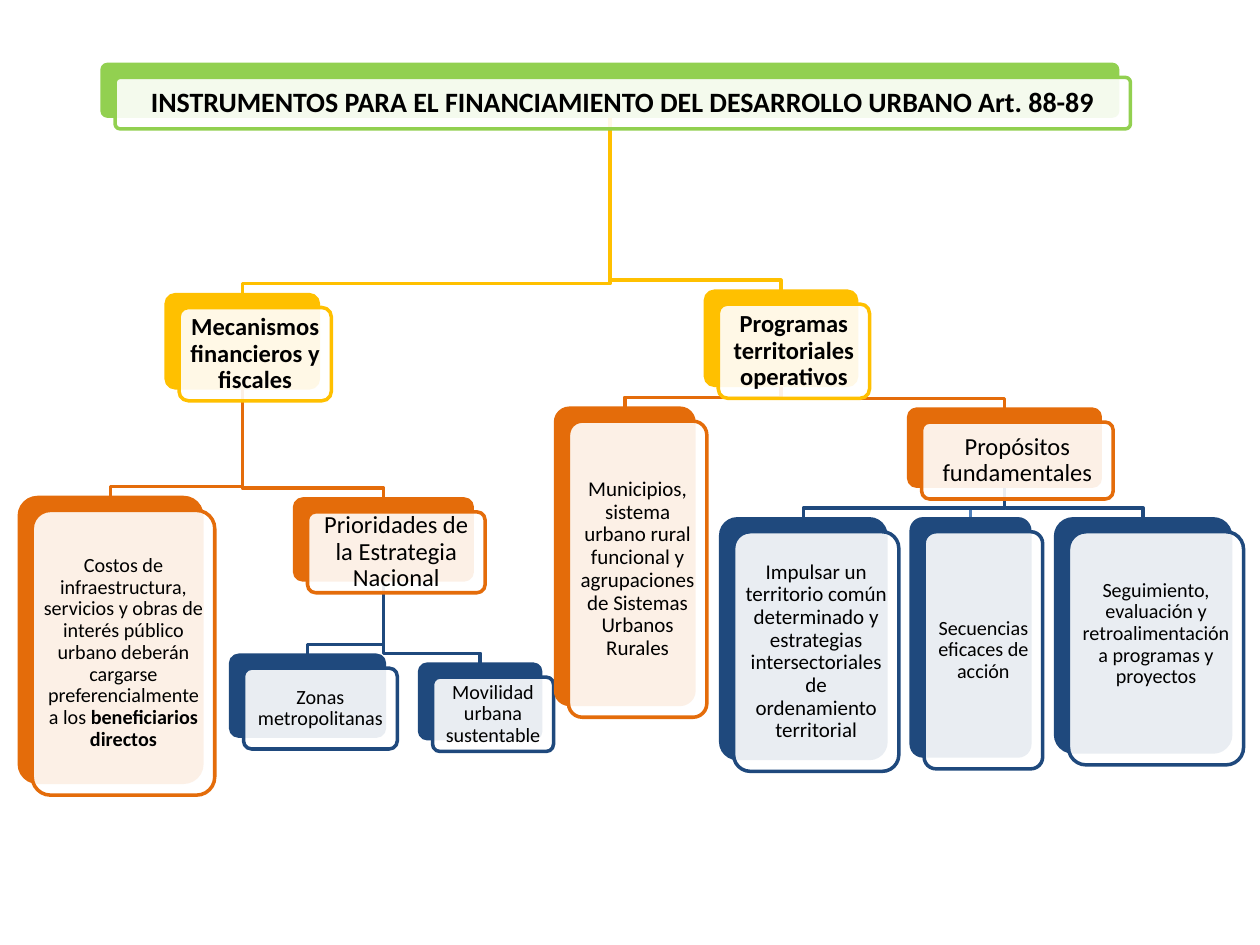
"""Draws the hierarchy of funding instruments for urban development."""
from dataclasses import dataclass
from typing import Optional

from lxml import etree
from pptx import Presentation
from pptx.dml.color import RGBColor
from pptx.enum.shapes import MSO_SHAPE
from pptx.enum.text import MSO_ANCHOR, PP_ALIGN
from pptx.oxml.ns import qn
from pptx.util import Cm, Pt

ROUNDED = MSO_SHAPE.ROUNDED_RECTANGLE
MIDDLE = MSO_ANCHOR.MIDDLE
CENTER = PP_ALIGN.CENTER

GREEN = RGBColor(0x92, 0xD0, 0x50)
YELLOW = RGBColor(0xFF, 0xC0, 0x00)
ORANGE = RGBColor(0xE4, 0x6C, 0x0A)
NAVY = RGBColor(0x1F, 0x49, 0x7D)
BLUE = RGBColor(0x4F, 0x81, 0xBD)
WHITE = RGBColor(0xFF, 0xFF, 0xFF)
BLACK = RGBColor(0x00, 0x00, 0x00)

FONT = "Calibri"
LINE_WIDTH = Pt(2)
CARD_OFFSET = 0.26
ELBOW_RISE = 0.22
INSET_PER_POINT = 0.0106


@dataclass
class Node:
    """One box of the hierarchy, with its place in centimetres."""
    text: str
    left: float
    top: float
    width: float
    height: float
    color: RGBColor
    size: float
    parent: Optional["Node"] = None
    bold: bool = False
    bold_tail: str = ""
    link_color: Optional[RGBColor] = None
    bottom_space: float = 0

    @property
    def center(self) -> float:
        return self.left + self.width / 2

    @property
    def bottom(self) -> float:
        return self.top + self.height


TITLE = Node("INSTRUMENTOS PARA EL FINANCIAMIENTO DEL DESARROLLO URBANO Art. 88-89",
             2.06, 1.3, 20.47, 1.04, GREEN, 16, bold=True)
MECHANISMS = Node("Mecanismos financieros y fiscales",
                  3.35, 5.94, 3.07, 1.88, YELLOW, 14, TITLE, bold=True)
COSTS = Node("Costos de infraestructura, servicios y obras de interés público urbano "
             "deberán cargarse preferencialmente a los ",
             0.39, 10.03, 3.68, 5.74, ORANGE, 11.5, MECHANISMS,
             bold_tail="beneficiarios directos")
PRIORITIES = Node("Prioridades de la Estrategia Nacional",
                  5.94, 10.06, 3.58, 1.63, ORANGE, 14, MECHANISMS)
ZONES = Node("Zonas metropolitanas", 4.65, 13.21, 3.1, 1.63, NAVY, 11.5, PRIORITIES)
MOBILITY = Node("Movilidad urbana sustentable",
                8.46, 13.39, 2.44, 1.5, NAVY, 11.5, PRIORITIES)
PROGRAMS = Node("Programas territoriales operativos",
                14.22, 5.87, 3.05, 1.9, YELLOW, 14, TITLE, bold=True)
TOWNS = Node("Municipios, sistema urbano rural funcional y agrupaciones de Sistemas "
             "Urbanos Rurales", 11.2, 8.23, 2.79, 5.97, ORANGE, 12, PROGRAMS)
PURPOSES = Node("Propósitos fundamentales",
                18.32, 8.25, 3.86, 1.55, ORANGE, 14, PROGRAMS)
TERRITORY = Node("Impulsar un territorio común determinado y estrategias "
                 "intersectoriales de ordenamiento territorial",
                 14.53, 10.46, 3.33, 4.83, NAVY, 12, PURPOSES)
SEQUENCES = Node("Secuencias eficaces de acción",
                 18.37, 10.46, 2.39, 4.78, NAVY, 11.5, PURPOSES, link_color=BLUE)
FOLLOW_UP = Node("Seguimiento, evaluación y retroalimentación a programas y proyectos",
                 21.28, 10.46, 3.53, 4.7, NAVY, 11.5, PURPOSES, bottom_space=0.58)

NODES = [TITLE, MECHANISMS, COSTS, PRIORITIES, ZONES, MOBILITY, PROGRAMS, TOWNS,
         PURPOSES, TERRITORY, SEQUENCES, FOLLOW_UP]


def add_link(s, parent: Node, child: Node) -> None:
    """Draw the elbow line from a parent down to its child."""
    elbow = child.top - ELBOW_RISE
    points = [(parent.center, elbow), (child.center, elbow), (child.center, child.top)]
    builder = s.shapes.build_freeform(Cm(parent.center), Cm(parent.bottom))
    builder.add_line_segments([(Cm(x), Cm(y)) for x, y in points], close=False)
    sp = builder.convert_to_shape()
    sp.shadow.inherit = False
    sp.fill.background()
    sp.line.color.rgb = child.link_color or child.color
    sp.line.width = LINE_WIDTH


def add_card(s, node: Node, offset: float, fill: RGBColor):
    """Add one rounded rectangle of a node and return it."""
    sp = s.shapes.add_shape(ROUNDED, Cm(node.left + offset), Cm(node.top + offset),
                            Cm(node.width), Cm(node.height))
    sp.adjustments[0] = 0.1
    sp.shadow.inherit = False
    sp.fill.solid()
    sp.fill.fore_color.rgb = fill
    sp.line.color.rgb = node.color
    sp.line.width = LINE_WIDTH
    return sp


def add_node(s, node: Node) -> None:
    """Draw the coloured back card and the translucent card with the text."""
    add_card(s, node, 0, node.color)
    sp = add_card(s, node, CARD_OFFSET, WHITE)
    color = sp.fill._xPr.find(qn("a:solidFill"))[0]
    etree.SubElement(color, qn("a:alpha"), val="90000")

    tf = sp.text_frame
    tf.word_wrap = True
    tf.vertical_anchor = MIDDLE
    inset = node.size * INSET_PER_POINT
    tf.margin_left = tf.margin_right = tf.margin_top = Cm(inset)
    tf.margin_bottom = Cm(inset + node.bottom_space)
    p = tf.paragraphs[0]
    p.alignment = CENTER
    p.line_spacing = 0.9
    p.font.name = FONT
    p.font.size = Pt(node.size)
    p.font.color.rgb = BLACK
    p.font.bold = node.bold
    p.add_run().text = node.text
    if node.bold_tail:
        r = p.add_run()
        r.text = node.bold_tail
        r.font.bold = True


def main() -> None:
    """Build the slide and save it."""
    prs = Presentation()
    prs.slide_width = Cm(25.4)
    prs.slide_height = Cm(19.05)
    s = prs.slides.add_slide(prs.slide_layouts[6])
    for node in reversed(NODES):
        if node.parent:
            add_link(s, node.parent, node)
    for node in NODES:
        add_node(s, node)
    prs.save("out.pptx")


if __name__ == "__main__":
    main()
